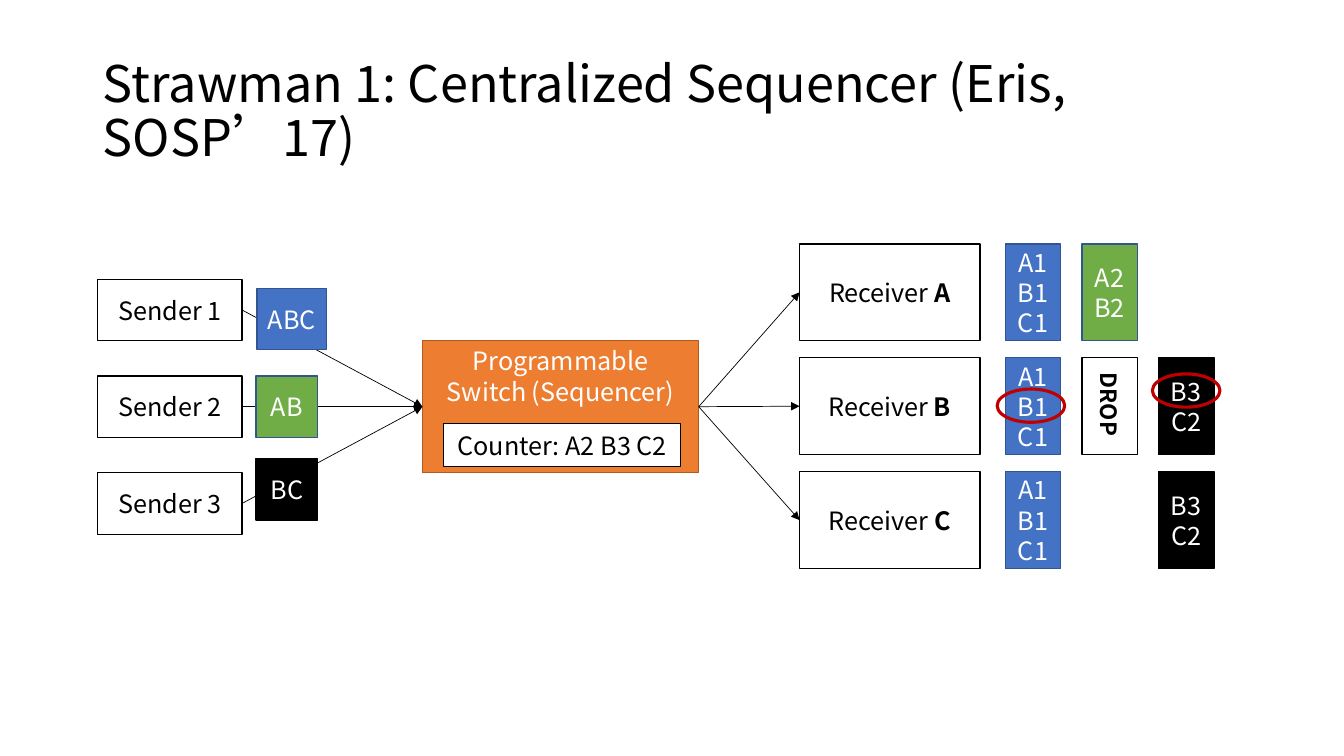
"""Build the centralized sequencer slide."""
from dataclasses import dataclass

from lxml import etree
from pptx import Presentation
from pptx import util as u
from pptx.dml.color import RGBColor
from pptx.enum import shapes, text
from pptx.oxml import ns

EMU_PER_PX = 9144


def px(length):
    """Turn whole pixels into EMU."""
    return u.Emu(length * EMU_PER_PX)


@dataclass(frozen=True)
class Theme:
    """Colours, font and sizes of the slide."""
    font: str = "Noto Sans CJK SC"
    black: str = "000000"
    white: str = "FFFFFF"
    blue: str = "4472C4"
    green: str = "70AD47"
    orange: str = "ED7D31"
    navy: str = "325491"
    rust: str = "AF5C24"
    red: str = "C00000"
    title_size: int = 36
    body_size: int = 18
    drop_size: int = 16
    outline: float = 1
    arrow: float = 0.5
    ring: float = 2.25


class Canvas:
    """Draws styled elements on one slide."""

    def __init__(self, slide, theme):
        self.slide = slide
        self.theme = theme

    def style(self, frame, size, color, align, bold=None):
        """Format every run of a text frame."""
        for paragraph in frame.paragraphs:
            paragraph.alignment = align
            for run in paragraph.runs:
                font = run.font
                font.name, font.size = self.theme.font, u.Pt(size)
                font.color.rgb = RGBColor.from_string(color)
                if bold is not None:
                    font.bold = bold
                east_asian = etree.SubElement(run._r.get_or_add_rPr(), ns.qn("a:ea"))
                east_asian.set("typeface", self.theme.font)

    def title(self, words, left, top, width, height):
        """Move and format the title placeholder."""
        holder = self.slide.shapes.title
        holder.left, holder.top = px(left), px(top)
        holder.width, holder.height = px(width), px(height)
        frame = holder.text_frame
        frame.text = words
        frame.auto_size = text.MSO_AUTO_SIZE.NONE
        frame.vertical_anchor = text.MSO_ANCHOR.MIDDLE
        frame.paragraphs[0].line_spacing = 0.9
        self.style(frame, self.theme.title_size, self.theme.black, text.PP_ALIGN.LEFT)

    def box(self, words, left, top, width, height, fill, line, color,
            strong="", anchor=text.MSO_ANCHOR.MIDDLE):
        """Add a rectangle with centred text and an optional bold ending."""
        rect = self.slide.shapes.add_shape(
            shapes.MSO_SHAPE.RECTANGLE, px(left), px(top), px(width), px(height))
        rect.shadow.inherit = False
        rect.fill.solid()
        rect.fill.fore_color.rgb = RGBColor.from_string(fill)
        rect.line.color.rgb = RGBColor.from_string(line)
        rect.line.width = u.Pt(self.theme.outline)
        frame = rect.text_frame
        frame.text = words
        frame.word_wrap = True
        frame.vertical_anchor = anchor
        if strong:
            ending = frame.paragraphs[0].add_run()
            ending.text = strong
            ending.font.bold = True
        self.style(frame, self.theme.body_size, color, text.PP_ALIGN.CENTER)
        return rect

    def plain(self, words, left, top, width, height, strong=""):
        """Add a white box with black outline and text."""
        theme = self.theme
        return self.box(words, left, top, width, height,
                        theme.white, theme.black, theme.black, strong)

    def packet(self, words, left, top, width, height, fill):
        """Add a coloured packet with white text."""
        theme = self.theme
        line = theme.black if fill == theme.black else theme.navy
        return self.box(words, left, top, width, height, fill, line, theme.white)

    def arrow(self, source, target):
        """Join the right side of one box to the left side of another."""
        link = self.slide.shapes.add_connector(shapes.MSO_CONNECTOR.STRAIGHT, 0, 0, 0, 0)
        link.begin_connect(source, 3)
        link.end_connect(target, 1)
        link.line.color.rgb = RGBColor.from_string(self.theme.black)
        link.line.width = u.Pt(self.theme.arrow)
        head = etree.SubElement(link.line._get_or_add_ln(), ns.qn("a:tailEnd"))
        head.set("type", "triangle")
        etree.SubElement(link._element.spPr, ns.qn("a:effectLst"))

    def ring(self, left, top, width, height):
        """Add an unfilled red ellipse."""
        oval = self.slide.shapes.add_shape(
            shapes.MSO_SHAPE.OVAL, px(left), px(top), px(width), px(height))
        oval.shadow.inherit = False
        oval.fill.background()
        oval.line.color.rgb = RGBColor.from_string(self.theme.red)
        oval.line.width = u.Pt(self.theme.ring)

    def sideways(self, words, left, top, width, height):
        """Add a bold label turned by 90 degrees."""
        label = self.slide.shapes.add_textbox(px(left), px(top), px(width), px(height))
        label.rotation = 90
        frame = label.text_frame
        frame.text = words
        frame.word_wrap = True
        frame.auto_size = text.MSO_AUTO_SIZE.SHAPE_TO_FIT_TEXT
        self.style(frame, self.theme.drop_size, self.theme.black,
                   text.PP_ALIGN.LEFT, bold=True)


def main():
    """Build and save the slide."""
    deck = Presentation()
    deck.slide_width, deck.slide_height = px(1333), px(750)
    theme = Theme()
    canvas = Canvas(deck.slides.add_slide(deck.slide_layouts[5]), theme)
    canvas.title("Strawman 1: Centralized Sequencer (Eris, SOSP’17)", 92, 40, 1150, 145)

    senders = [canvas.plain(f"Sender {i + 1}", 97, 277 + 96 * i, 143, 61)
               for i in range(3)]
    switch = canvas.box("Programmable Switch (Sequencer)", 419, 338, 274, 131,
                        theme.orange, theme.rust, theme.white,
                        anchor=text.MSO_ANCHOR.TOP)
    canvas.plain("Counter: A2 B3 C2", 440, 420, 235, 43)

    row_tops = [242 + 113 * i for i in range(3)]
    slot_lefts = [997 + 76 * i for i in range(3)]
    row_height, slot_width = 96, 55
    receivers = [canvas.plain("Receiver ", 793, top, 179, row_height, strong=name)
                 for name, top in zip("ABC", row_tops)]

    for sender in senders:
        canvas.arrow(sender, switch)
    for receiver in receivers:
        canvas.arrow(switch, receiver)

    for words, left, top, width, fill in (
            ("ABC", 255, 286, 69, theme.blue),
            ("AB", 254, 373, 61, theme.green),
            ("BC", 254, 455, 61, theme.black)):
        canvas.packet(words, left, top, width, 61, fill)

    first = ("A1\nB1\nC1", theme.blue)
    second = ("A2\nB2", theme.green)
    third = ("B3\nC2", theme.black)
    deliveries = ((first, second, None), (first, None, third), (first, None, third))
    for top, delivered in zip(row_tops, deliveries):
        for left, message in zip(slot_lefts, delivered):
            if message:
                words, fill = message
                canvas.packet(words, left, top, slot_width, row_height, fill)

    canvas.plain("", slot_lefts[1], row_tops[1], slot_width, row_height)
    canvas.sideways("DROP", 1058, 384, 85, 37)
    for left, top in ((989, 386), (1143, 371)):
        canvas.ring(left, top, 67, 33)

    deck.save("out.pptx")


if __name__ == "__main__":
    main()
